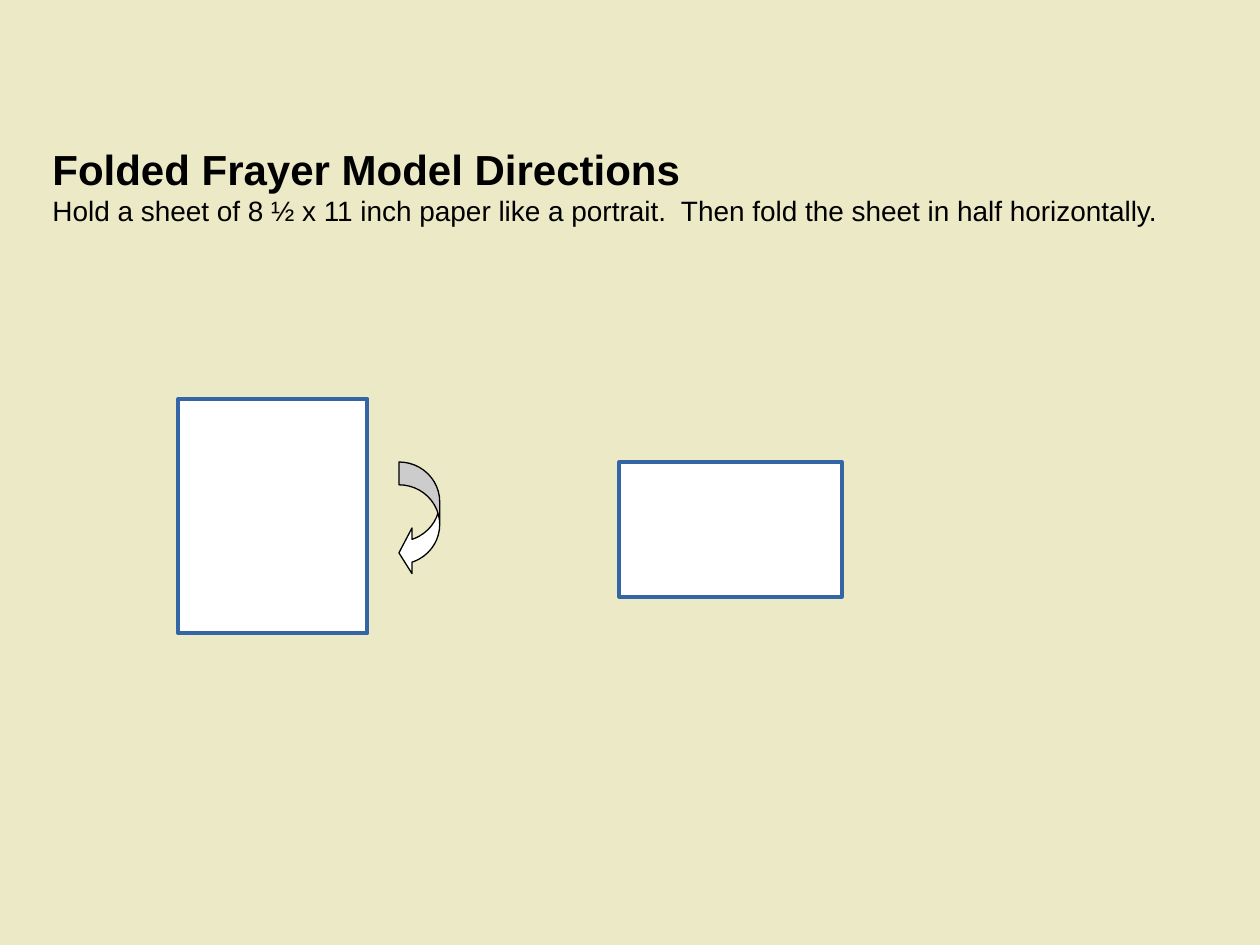
from pptx import Presentation
from pptx.dml.color import RGBColor
from pptx.enum.shapes import MSO_SHAPE
from pptx.enum.text import MSO_ANCHOR
from pptx.util import Pt

RECT = MSO_SHAPE.RECTANGLE
CURVE = MSO_SHAPE.CURVED_LEFT_ARROW
MIDDLE = MSO_ANCHOR.MIDDLE

THEME = {
    "font": "Arial",
    "ground": "ECE9C6",
    "paper": "FFFFFF",
    "edge": "3465A4",
    "ink": "000000",
    "title": 24,
    "body": 16,
}

LINES = [
    ("Folded Frayer Model Directions", "title", True),
    ("Hold a sheet of 8 ½ x 11 inch paper like a portrait.  Then fold the sheet in half horizontally.", "body", False),
]
TEXT_BOX = (30, 74, 678, 64)

SHAPES = [
    (RECT, (102, 228, 108, 134), "edge", 2.25, ()),
    (CURVE, (228, 264, 23.3, 65), "ink", 0.75, (0.56, 1.12, 0.32)),
    (RECT, (354, 264, 127, 77), "edge", 2.25, ()),
]


def color(name):
    return RGBColor.from_string(THEME[name])


def place(box):
    return [Pt(n) for n in box]


def add_shape(slide, kind, box, edge, width, turns):
    shape = slide.shapes.add_shape(kind, *place(box))
    shape.shadow.inherit = False
    shape.fill.solid()
    shape.fill.fore_color.rgb = color("paper")
    shape.line.color.rgb = color(edge)
    shape.line.width = Pt(width)
    for i, turn in enumerate(turns):
        shape.adjustments[i] = turn


def add_text(slide):
    frame = slide.shapes.add_textbox(*place(TEXT_BOX)).text_frame
    frame.word_wrap = True
    frame.vertical_anchor = MIDDLE
    frame.margin_left = frame.margin_right = 0
    frame.margin_top = frame.margin_bottom = 0
    frame.text = "\n".join(line[0] for line in LINES)
    for para, (_, size, bold) in zip(frame.paragraphs, LINES):
        font = para.runs[0].font
        font.name = THEME["font"]
        font.size = Pt(THEME[size])
        font.bold = bold
        font.color.rgb = color("ink")


def main():
    deck = Presentation()
    deck.slide_width, deck.slide_height = Pt(720), Pt(540)
    slide = deck.slides.add_slide(deck.slide_layouts[6])
    slide.background.fill.solid()
    slide.background.fill.fore_color.rgb = color("ground")
    for item in SHAPES:
        add_shape(slide, *item)
    add_text(slide)
    deck.save("out.pptx")


if __name__ == "__main__":
    main()
